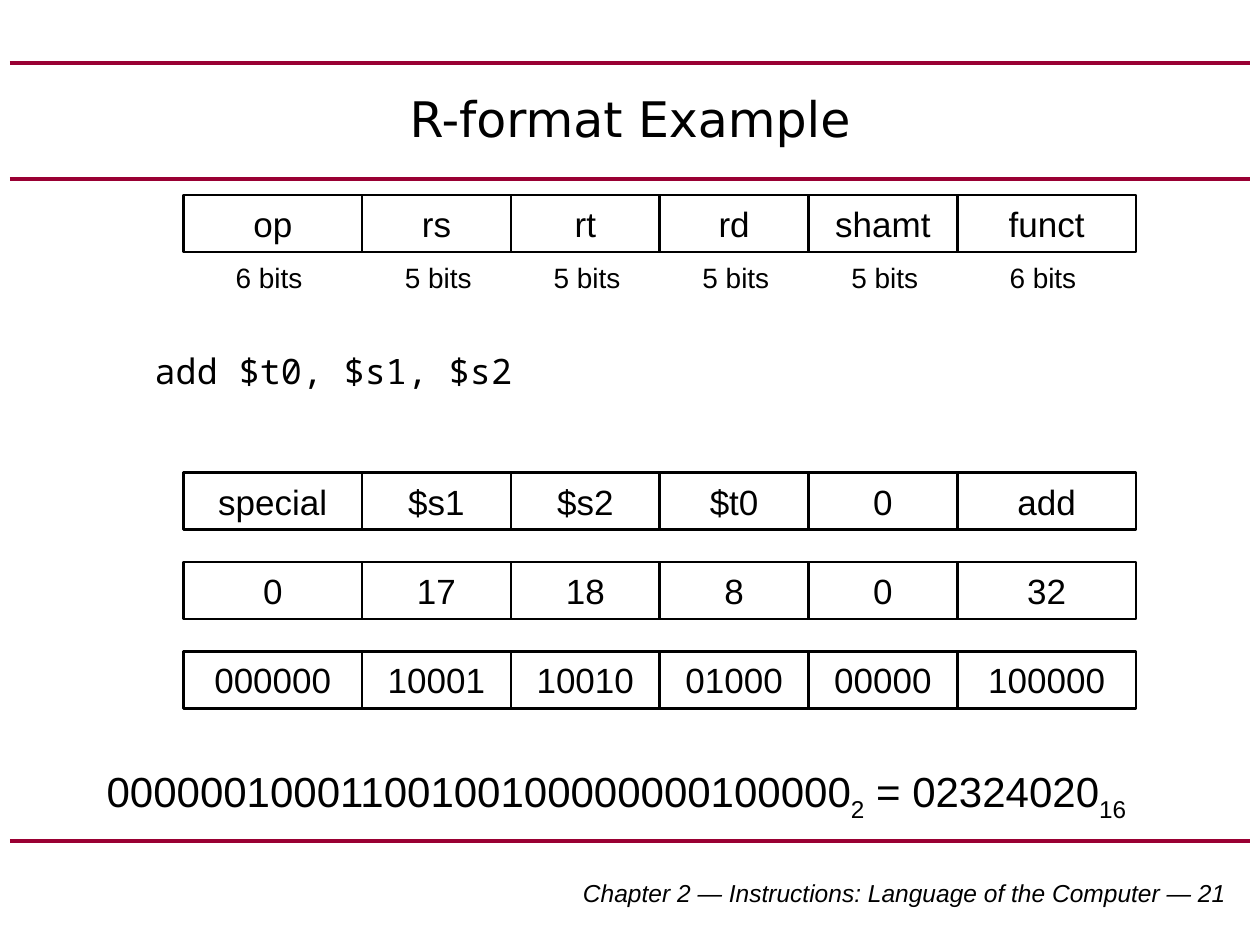
"""Build the slide that encodes an R-format add instruction."""
from dataclasses import dataclass

from lxml.etree import SubElement
from pptx import Presentation
from pptx.dml.color import RGBColor
from pptx.enum.shapes import MSO_CONNECTOR, MSO_SHAPE
from pptx.enum.text import MSO_ANCHOR, PP_ALIGN
from pptx.oxml.ns import qn
from pptx.util import Cm, Pt

BLACK = RGBColor(0x00, 0x00, 0x00)
CRIMSON = RGBColor(0x99, 0x00, 0x33)
TABLE_LEFT = 3.7
CELL_HEIGHT = 1.15
HEADER_TOP = 3.93
CAPTION_TOP = 5.13
FIRST_ROW_TOP = 9.53
ROW_STEP = 1.8


@dataclass(frozen=True)
class Field:
    name: str
    bits: int
    width: float
    caption_inset: float


FIELDS = (
    Field("op", 6, 3.6, 0.8),
    Field("rs", 5, 3, 0.61),
    Field("rt", 5, 3, 0.61),
    Field("rd", 5, 3, 0.61),
    Field("shamt", 5, 3, 0.61),
    Field("funct", 6, 3.6, 0.8),
)
ENCODINGS = (
    ("special", "$s1", "$s2", "$t0", "0", "add"),
    ("0", "17", "18", "8", "0", "32"),
    ("000000", "10001", "10010", "01000", "00000", "100000"),
)


def write_text(paragraph, text: str, *, size: float, font: str = "Arial",
               align: PP_ALIGN = PP_ALIGN.LEFT, italic: bool = False,
               subscript: bool = False) -> None:
    paragraph.alignment = align
    run = paragraph.add_run()
    run.text = text
    run.font.name = font
    run.font.size = Pt(size)
    run.font.italic = italic
    run.font.color.rgb = BLACK
    if subscript:
        run.font._element.set("baseline", "-25000")


def add_text_box(shapes, left: float, top: float, width: float, height: float,
                 wrap: bool = True, anchor: MSO_ANCHOR = MSO_ANCHOR.TOP):
    text_box = shapes.add_textbox(Cm(left), Cm(top), Cm(width), Cm(height))
    text_box.text_frame.word_wrap = wrap
    text_box.text_frame.vertical_anchor = anchor
    return text_box.text_frame.paragraphs[0]


def add_rule(shapes, top: float) -> None:
    rule = shapes.add_connector(MSO_CONNECTOR.STRAIGHT, Cm(0.2), Cm(top), Cm(25.2), Cm(top))
    rule.line.color.rgb = CRIMSON
    rule.line.width = Pt(2.25)
    SubElement(rule._element.spPr, qn("a:effectLst"))


def add_cell(shapes, left: float, top: float, width: float, text: str) -> None:
    cell = shapes.add_shape(MSO_SHAPE.RECTANGLE, Cm(left), Cm(top), Cm(width), Cm(CELL_HEIGHT))
    cell.shadow.inherit = False
    cell.fill.background()
    cell.line.color.rgb = BLACK
    cell.line.width = Pt(1.5)
    cell.text_frame.vertical_anchor = MSO_ANCHOR.MIDDLE
    write_text(cell.text_frame.paragraphs[0], text, size=20, align=PP_ALIGN.CENTER)


def add_row(shapes, top: float, values: tuple[str, ...]) -> None:
    left = TABLE_LEFT
    for field, value in zip(FIELDS, values):
        add_cell(shapes, left, top, field.width, value)
        left += field.width


def add_captions(shapes) -> None:
    left = TABLE_LEFT
    for field in FIELDS:
        paragraph = add_text_box(shapes, left + field.caption_inset, CAPTION_TOP,
                                 1.85, 0.94, wrap=False)
        write_text(paragraph, f"{field.bits} bits", size=16, align=PP_ALIGN.CENTER)
        left += field.width


def main() -> None:
    presentation = Presentation()
    presentation.slide_width = Cm(25.4)
    presentation.slide_height = Cm(19.05)
    slide = presentation.slides.add_slide(presentation.slide_layouts[5])
    shapes = slide.shapes

    for top in (1.27, 3.6, 16.95):
        add_rule(shapes, top)

    title = shapes.title
    title.left, title.top, title.width, title.height = Cm(1.27), Cm(1.27), Cm(22.86), Cm(2.2)
    title.text_frame.vertical_anchor = MSO_ANCHOR.MIDDLE
    write_text(title.text_frame.paragraphs[0], "R-format Example", size=28,
               font="DejaVu Sans", align=PP_ALIGN.CENTER)

    header = shapes.add_group_shape()
    add_row(header.shapes, HEADER_TOP, tuple(field.name for field in FIELDS))
    add_captions(header.shapes)

    instruction = add_text_box(shapes, 1.9, 6.93, 23, 1.8)
    instruction._p.get_or_add_pPr().set("marL", str(Cm(0.97)))
    write_text(instruction, "add $t0, $s1, $s2", size=20, font="Noto Sans Mono")

    for index, values in enumerate(ENCODINGS):
        add_row(shapes, FIRST_ROW_TOP + index * ROW_STEP, values)

    equation = add_text_box(shapes, 1.9, 15.32, 22.6, 1.4, anchor=MSO_ANCHOR.MIDDLE)
    for number, base in (("00000010001100100100000000100000", "2"), (" = 02324020", "16")):
        write_text(equation, number, size=24)
        write_text(equation, base, size=24, subscript=True)

    footer = add_text_box(shapes, 9.53, 17.58, 15.44, 0.84)
    write_text(footer, "Chapter 2 — Instructions: Language of the Computer — 21",
               size=14, align=PP_ALIGN.RIGHT, italic=True)

    presentation.save("out.pptx")


if __name__ == "__main__":
    main()
